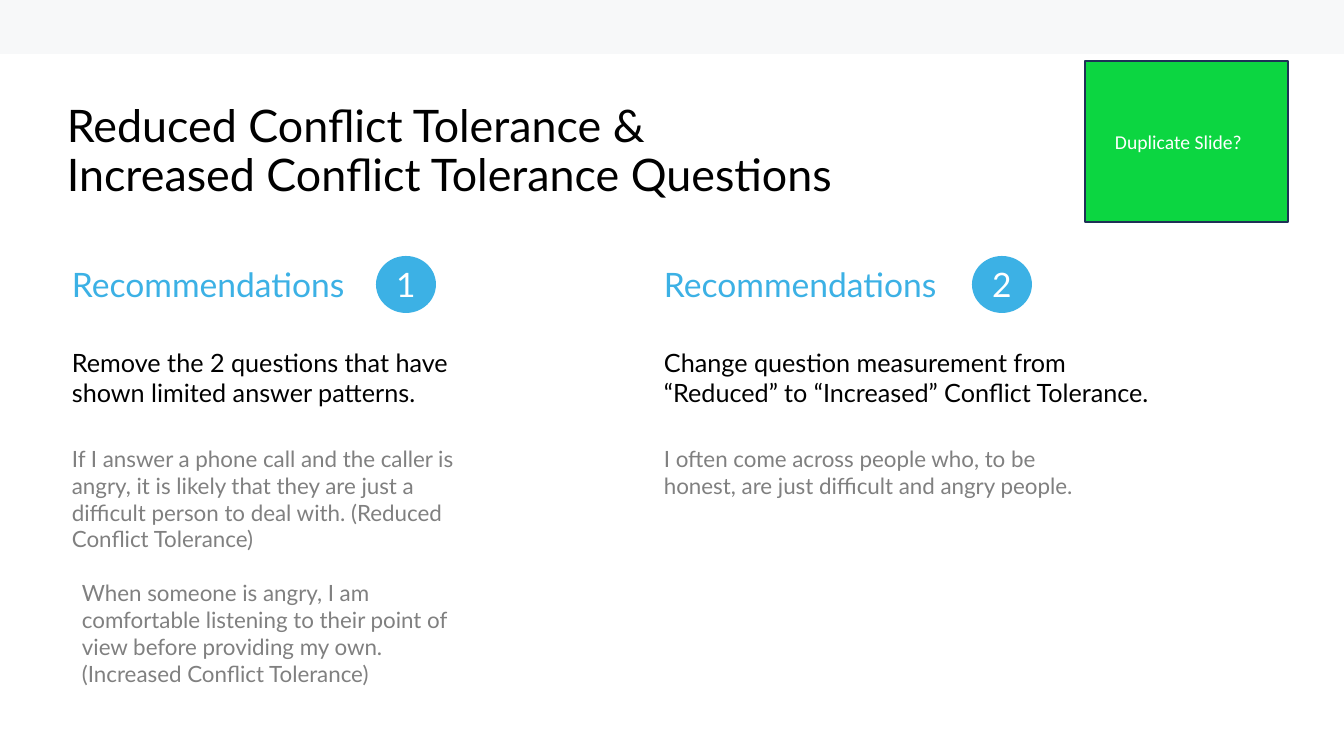
from pptx import Presentation
from pptx.dml.color import RGBColor
from pptx.enum.shapes import MSO_SHAPE
from pptx.enum.text import MSO_ANCHOR, PP_ALIGN
from pptx.util import Emu, Pt

EMU_PER_PX = 914400 / 100.8
SLIDE_W, SLIDE_H = 1344, 756
BLACK, WHITE, GREY, BLUE = "000000", "FFFFFF", "808080", "3CB1E5"


def px(length):
    return Emu(round(length * EMU_PER_PX))


def color(hex_value):
    return RGBColor.from_string(hex_value)


def style(paragraph, size, hex_value, font="Lato"):
    paragraph.font.size = Pt(size)
    paragraph.font.name = font
    paragraph.font.color.rgb = color(hex_value)
    for run in paragraph.runs:
        run.font.size = Pt(size)
        run.font.name = font
        run.font.color.rgb = color(hex_value)


def add_text(slide, box, text, size, hex_value):
    frame = slide.shapes.add_textbox(*map(px, box)).text_frame
    frame.word_wrap = True
    frame.text = text
    for paragraph in frame.paragraphs:
        style(paragraph, size, hex_value)
    return frame


def add_filled(slide, preset, box, fill, line=None):
    shape = slide.shapes.add_shape(preset, *map(px, box))
    shape.shadow.inherit = False
    shape.fill.solid()
    shape.fill.fore_color.rgb = color(fill)
    if line:
        shape.line.color.rgb = color(line)
        shape.line.width = Pt(1)
    else:
        shape.line.fill.background()
    return shape


def add_header(slide, left, top, width):
    add_filled(slide, MSO_SHAPE.RECTANGLE, (left, top, width, 54), "F7F8F9")
    title = add_text(slide, (left + 57, top + 99, width - 117, 85),
                     "Reduced Conflict Tolerance &\vIncreased Conflict Tolerance Questions",
                     32, BLACK)
    title.paragraphs[0].line_spacing = 0.9


def add_review_note(slide, box):
    frame = add_filled(slide, MSO_SHAPE.RECTANGLE, box, "0CD641", "1E3256").text_frame
    frame.margin_left = px(30)
    frame.vertical_anchor = MSO_ANCHOR.MIDDLE
    frame.text = "Duplicate Slide?"
    frame.paragraphs[0].alignment = PP_ALIGN.LEFT
    style(frame.paragraphs[0], 14, WHITE, "Calibri")


def add_number(slide, box, number):
    frame = add_filled(slide, MSO_SHAPE.OVAL, box, BLUE).text_frame
    frame.margin_left = frame.margin_right = px(11)
    frame.margin_top = frame.margin_bottom = px(11)
    frame.vertical_anchor = MSO_ANCHOR.MIDDLE
    frame.text = number
    frame.paragraphs[0].alignment = PP_ALIGN.CENTER
    style(frame.paragraphs[0], 24, WHITE)


def add_recommendation(slide, box, number, number_offset, advice, questions):
    left, top, width, height = box
    add_text(slide, (left, top + 3, 386, 50), "Recommendations", 24, BLUE)
    add_number(slide, (left + number_offset, top, 60, 57), number)
    add_text(slide, (left, top + 86, width, 72), advice, 18, BLACK)
    quoted = add_text(slide, (left, top + 184, min(width, 446), height - 184),
                      "\n".join(questions), 16, GREY)
    for later_question in quoted.paragraphs[1:]:
        later_question.space_before = Pt(19.2)
        properties = later_question._p.get_or_add_pPr()
        properties.set("marL", str(px(10)))
        properties.set("indent", "0")


def main():
    presentation = Presentation()
    presentation.slide_width, presentation.slide_height = px(SLIDE_W), px(SLIDE_H)
    slide = presentation.slides.add_slide(presentation.slide_layouts[6])

    add_header(slide, 0, 0, SLIDE_W)
    add_review_note(slide, (1085, 61, 203, 161))
    add_recommendation(
        slide, (62, 256, 413, 438), "1", 314,
        "Remove the 2 questions that have shown limited answer patterns.",
        ["If I answer a phone call and the caller is angry, it is likely that they are "
         "just a difficult person to deal with. (Reduced Conflict Tolerance)",
         "When someone is angry, I am comfortable listening to their point of view "
         "before providing my own. (Increased Conflict Tolerance)"])
    add_recommendation(
        slide, (654, 256, 513, 249), "2", 318,
        "Change question measurement from “Reduced” to “Increased” Conflict Tolerance.",
        ["I often come across people who, to be honest, are just difficult and angry people."])

    presentation.save("out.pptx")


if __name__ == "__main__":
    main()
